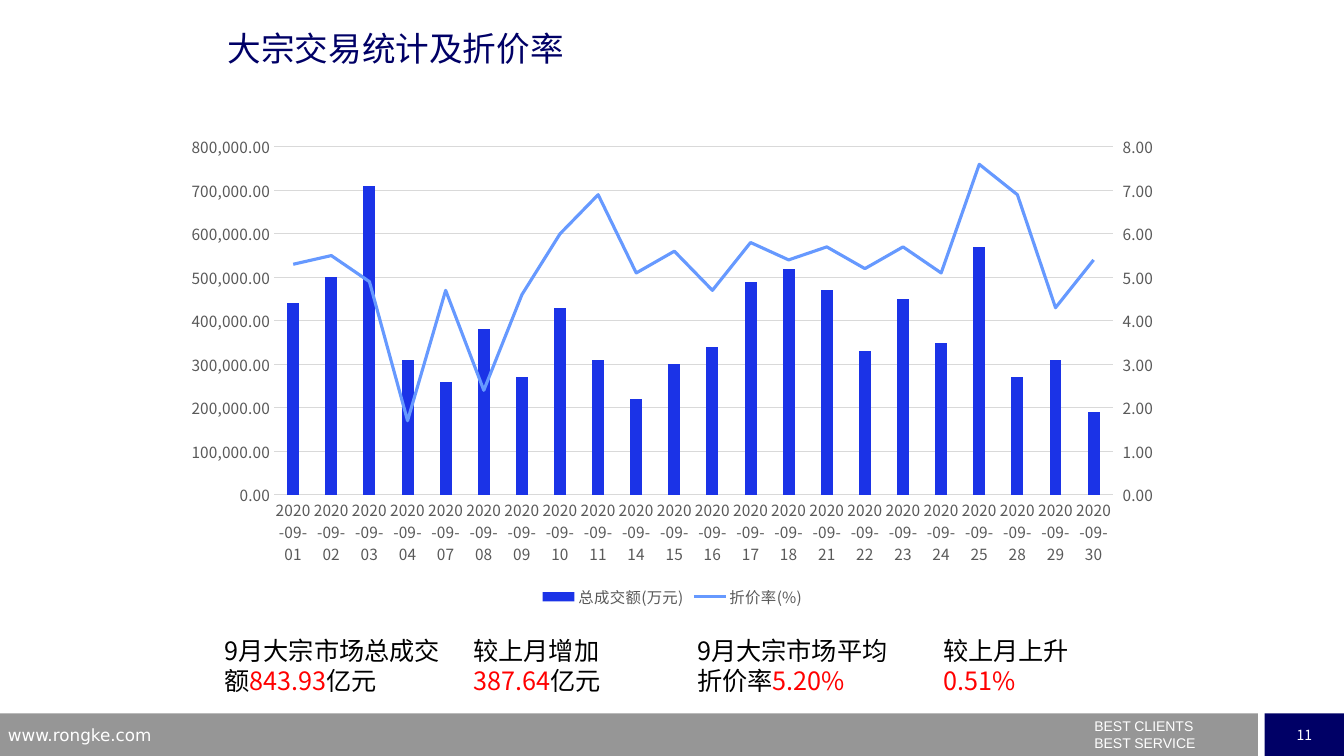
from copy import deepcopy
from dataclasses import dataclass

from lxml import etree
from pptx import Presentation
from pptx.chart.data import CategoryChartData
from pptx.dml.color import RGBColor
from pptx.enum.chart import XL_CHART_TYPE, XL_LEGEND_POSITION, XL_MARKER_STYLE, XL_TICK_MARK
from pptx.enum.shapes import MSO_SHAPE
from pptx.enum.text import MSO_ANCHOR, PP_ALIGN
from pptx.oxml import parse_xml
from pptx.oxml.ns import nsdecls, qn
from pptx.util import Cm, Pt

COLUMNS = XL_CHART_TYPE.COLUMN_CLUSTERED
LEGEND_BOTTOM = XL_LEGEND_POSITION.BOTTOM
NO_MARKER = XL_MARKER_STYLE.NONE
NO_TICK = XL_TICK_MARK.NONE
RECTANGLE = MSO_SHAPE.RECTANGLE
MIDDLE = MSO_ANCHOR.MIDDLE
CENTER = PP_ALIGN.CENTER

CJK = "Noto Sans CJK SC"
NAVY, WHITE, BLACK, RED = "000066", "FFFFFF", "000000", "FF0000"
FOOTER_GREY, LABEL_GREY, GRID_GREY = "969696", "595959", "D9D9D9"
TURNOVER_BLUE, DISCOUNT_BLUE = "1B33E7", "6699FF"

TRADING_DAYS = [1, 2, 3, 4, 7, 8, 9, 10, 11, 14, 15, 16, 17, 18, 21, 22, 23, 24, 25, 28, 29, 30]
TURNOVER = [
    440000, 500000, 710000, 310000, 260000, 380000, 270000, 430000, 310000, 220000, 300000,
    340000, 490000, 520000, 470000, 330000, 450000, 350000, 570000, 270000, 310000, 190000,
]
DISCOUNT = [
    5.3, 5.5, 4.9, 1.7, 4.7, 2.4, 4.6, 6, 6.9, 5.1, 5.6,
    4.7, 5.8, 5.4, 5.7, 5.2, 5.7, 5.1, 7.6, 6.9, 4.3, 5.4,
]


@dataclass
class Box:
    left: float
    top: float
    width: float
    height: float

    def lengths(self):
        return Cm(self.left), Cm(self.top), Cm(self.width), Cm(self.height)


@dataclass
class Finding:
    left: float
    width: float
    lines: list


FINDINGS = [
    Finding(5.41, 6.05, [[("9月大宗市场总成交额", BLACK), ("843.93", RED), ("亿元", BLACK)]]),
    Finding(11.68, 4.88, [[("较上月增加", BLACK)], [("387.64", RED), ("亿元", BLACK)]]),
    Finding(17.32, 5.51, [[("9月大宗市场平均折价率", BLACK), ("5.20%", RED)]]),
    Finding(23.52, 4.19, [[("较上月上升", BLACK), ("0.51%", RED)]]),
]


def rgb(value: str) -> RGBColor:
    return RGBColor.from_string(value)


def style_font(font, size: float, color: str, name: str = CJK) -> None:
    font.size = Pt(size)
    font.name = name
    font.color.rgb = rgb(color)
    east_asian = etree.Element(qn("a:ea"))
    east_asian.set("typeface", name)
    for latin in font._element.findall(qn("a:latin")):
        latin.addnext(east_asian)


def write(frame, lines: list, size: float, name: str = CJK, align=None,
          line_spacing=None, space_before=None) -> None:
    for index, parts in enumerate(lines):
        paragraph = frame.paragraphs[0] if index == 0 else frame.add_paragraph()
        paragraph.alignment = align
        paragraph.line_spacing = line_spacing
        if index and space_before:
            paragraph.space_before = Pt(space_before)
        for text, color in parts:
            run = paragraph.add_run()
            run.text = text
            style_font(run.font, size, color, name)


def add_text(slide, box: Box, lines: list, size: float, **layout) -> None:
    frame = slide.shapes.add_textbox(*box.lengths()).text_frame
    frame.word_wrap = True
    write(frame, lines, size, **layout)


def add_band(slide, box: Box, color: str):
    band = slide.shapes.add_shape(RECTANGLE, *box.lengths())
    band.shadow.inherit = False
    band.fill.solid()
    band.fill.fore_color.rgb = rgb(color)
    band.line.fill.background()
    return band


def set_value(parent, tag: str, value: str) -> None:
    for child in parent.findall(qn(tag)):
        child.set("val", value)


def drop(parent, tag: str) -> None:
    for child in parent.findall(qn(tag)):
        parent.remove(child)


def style_axis(axis) -> None:
    axis.major_tick_mark = NO_TICK
    axis.minor_tick_mark = NO_TICK
    style_font(axis.tick_labels.font, 11, LABEL_GREY)


def move_discount_to_right_axis(chart) -> None:
    plot_area = chart._chartSpace.chart.plotArea
    bars = plot_area.find(qn("c:barChart"))
    discount = bars.findall(qn("c:ser"))[1]
    drop(discount, "c:invertIfNegative")
    lines = parse_xml(
        f'<c:lineChart {nsdecls("c")}><c:grouping val="standard"/><c:varyColors val="0"/>'
        '<c:marker val="1"/><c:axId val="5001"/><c:axId val="5002"/></c:lineChart>'
    )
    lines.insert(2, discount)
    bars.addnext(lines)

    left_axis = plot_area.find(qn("c:valAx"))
    right_axis = deepcopy(left_axis)
    hidden_dates = deepcopy(plot_area.xpath("c:catAx|c:dateAx")[0])
    left_axis.addnext(right_axis)
    right_axis.addnext(hidden_dates)
    drop(right_axis, "c:majorGridlines")
    for axis, own, other in ((hidden_dates, "5001", "5002"), (right_axis, "5002", "5001")):
        set_value(axis, "c:axId", own)
        set_value(axis, "c:crossAx", other)
    set_value(hidden_dates, "c:delete", "1")
    set_value(right_axis, "c:axPos", "r")
    set_value(right_axis, "c:crosses", "max")
    set_value(right_axis, "c:majorTickMark", "out")
    set_value(right_axis, "c:majorUnit", "1")
    set_value(right_axis.find(qn("c:scaling")), "c:max", "8")
    right_axis.find(qn("c:numFmt")).set("formatCode", "0.00")


def add_turnover_chart(slide, box: Box) -> None:
    data = CategoryChartData()
    data.categories = [f"2020-09-{day:02d}" for day in TRADING_DAYS]
    data.add_series("总成交额(万元)", TURNOVER, "#,##0.00")
    data.add_series("折价率(%)", DISCOUNT, "0.00")
    chart = slide.shapes.add_chart(COLUMNS, *box.lengths(), data).chart
    chart.has_title = False
    style_font(chart.font, 11, BLACK)
    chart.has_legend = True
    chart.legend.position = LEGEND_BOTTOM
    chart.legend.include_in_layout = False
    style_font(chart.legend.font, 11, LABEL_GREY)

    dates, amounts = chart.category_axis, chart.value_axis
    style_axis(dates)
    style_axis(amounts)
    amounts.minimum_scale, amounts.maximum_scale, amounts.major_unit = 0, 800000, 100000
    amounts.tick_labels.number_format = "#,##0.00"
    amounts.tick_labels.number_format_is_linked = False
    amounts.format.line.fill.background()
    amounts.has_major_gridlines = True
    for line in (dates.format.line, amounts.major_gridlines.format.line):
        line.color.rgb = rgb(GRID_GREY)
        line.width = Pt(0.75)

    move_discount_to_right_axis(chart)
    bars, lines = chart.plots
    bars.gap_width, bars.overlap = 219, -27
    bars.vary_by_categories = False
    turnover, discount = bars.series[0], lines.series[0]
    turnover.format.fill.solid()
    turnover.format.fill.fore_color.rgb = rgb(TURNOVER_BLUE)
    discount.format.line.color.rgb = rgb(DISCOUNT_BLUE)
    discount.format.line.width = Pt(2.25)
    discount.marker.style = NO_MARKER
    discount.smooth = False


def add_footer(slide) -> None:
    add_band(slide, Box(0, 17.98, 31.7, 1.07), FOOTER_GREY)
    page_number = add_band(slide, Box(31.87, 17.98, 2, 1.07), NAVY).text_frame
    page_number.word_wrap = False
    page_number.vertical_anchor = MIDDLE
    write(page_number, [[("11", WHITE)]], 10, align=CENTER)
    add_text(slide, Box(27.33, 18.14, 6.5, 0.91),
             [[("BEST CLIENTS", WHITE)], [("BEST SERVICE", WHITE)]], 10,
             name="Arial", line_spacing=0.5, space_before=6)
    add_text(slide, Box(-0.05, 18.14, 8.18, 0.66), [[("www.rongke.com", WHITE)]], 12,
             name="DejaVu Sans")


def main() -> None:
    deck = Presentation()
    deck.slide_width, deck.slide_height = Cm(33.87), Cm(19.05)
    slide = deck.slides.add_slide(deck.slide_layouts[6])
    add_footer(slide)
    add_text(slide, Box(5.49, 0.58, 22.86, 3.18), [[("大宗交易统计及折价率", NAVY)]], 24)
    for finding in FINDINGS:
        add_text(slide, Box(finding.left, 15.88, finding.width, 1.8), finding.lines, 18)
    add_turnover_chart(slide, Box(4.32, 3.18, 25.25, 12.24))
    deck.save("out.pptx")


if __name__ == "__main__":
    main()
